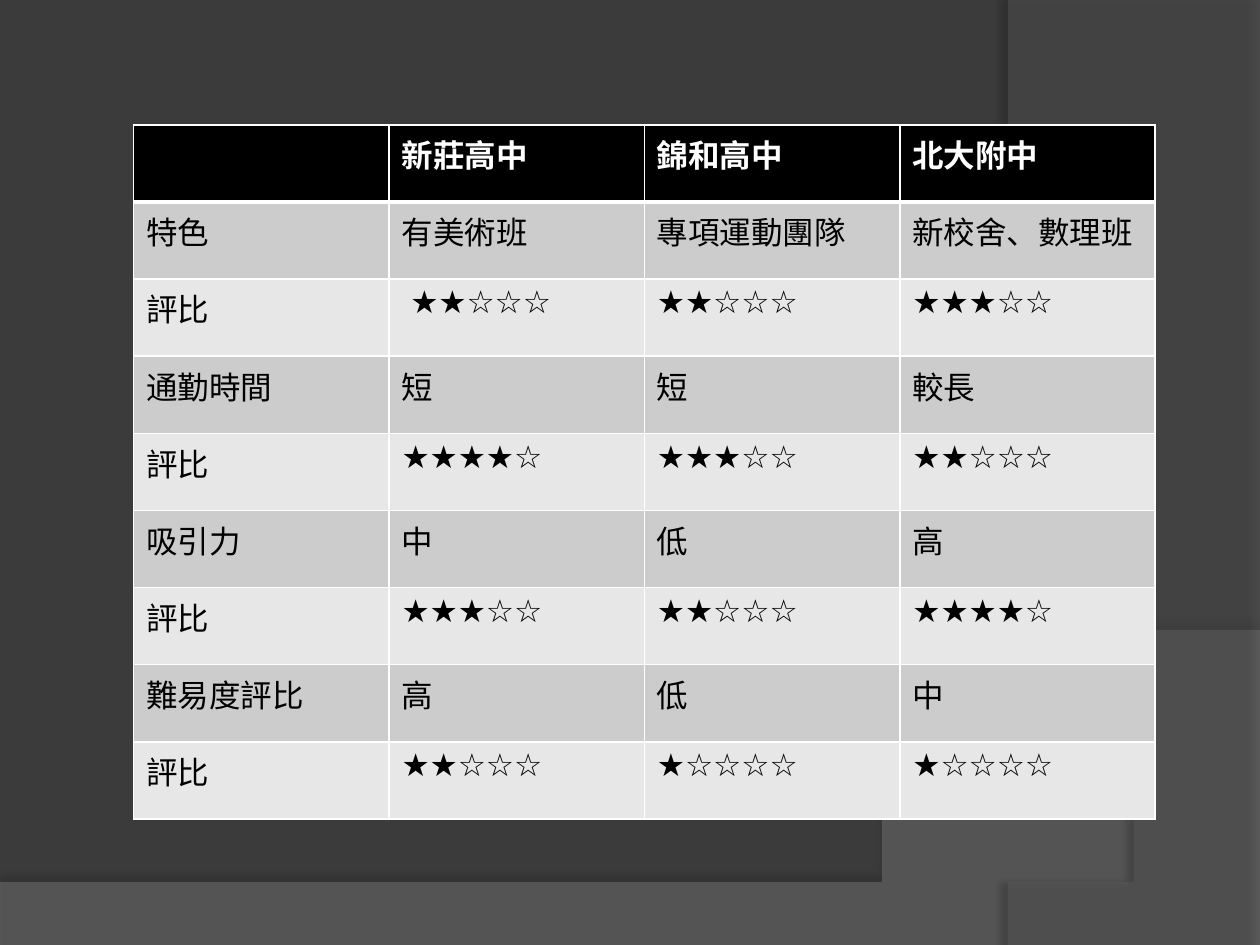
from lxml.etree import SubElement
from pptx import Presentation
from pptx.dml.color import RGBColor
from pptx.oxml.ns import qn
from pptx.util import Inches, Pt

COLORS = {
    "background": "3B3B3B",
    "lower_wave": "7F7F7F",
    "right_wave": "5E5E5E",
    "shadow": "000000",
    "header": "000000",
    "odd_row": "CCCCCC",
    "even_row": "E7E7E7",
    "border": "FFFFFF",
    "header_text": "FFFFFF",
    "body_text": "000000",
}
FONT = "Arial"
CURVE_STEPS = 48

SCHOOL_ROWS = [
    ("", "新莊高中", "錦和高中", "北大附中"),
    ("特色", "有美術班", "專項運動團隊", "新校舍、數理班"),
    ("評比", " ★★☆☆☆", "★★☆☆☆", "★★★☆☆"),
    ("通勤時間", "短", "短", "較長"),
    ("評比", "★★★★☆", "★★★☆☆", "★★☆☆☆"),
    ("吸引力", "中", "低", "高"),
    ("評比", "★★★☆☆", "★★☆☆☆", "★★★★☆"),
    ("難易度評比", "高", "低", "中"),
    ("評比", "★★☆☆☆", "★☆☆☆☆", "★☆☆☆☆"),
]


def color(name):
    return RGBColor.from_string(COLORS[name])


def curve_points(start, control_one, control_two, end):
    """Points along a cubic Bezier curve, without its start."""
    points = []
    for step in range(1, CURVE_STEPS + 1):
        t = step / CURVE_STEPS
        weights = ((1 - t) ** 3, 3 * t * (1 - t) ** 2, 3 * t**2 * (1 - t), t**3)
        corners = (start, control_one, control_two, end)
        points.append(tuple(sum(w * corner[axis] for w, corner in zip(weights, corners))
                            for axis in (0, 1)))
    return points


def add_color(parent, name, alpha):
    element = SubElement(parent, qn("a:srgbClr"), val=COLORS[name])
    SubElement(element, qn("a:alpha"), val=str(alpha * 1000))


def add_wave(slide, corners, curve, fill, alpha, shadow):
    """Draw a translucent outline: straight corners, then a curve from the last one."""
    points = corners + curve_points(corners[-1], *curve)
    builder = slide.shapes.build_freeform(*points[0], scale=Inches(1))
    builder.add_line_segments(points[1:], close=True)
    wave = builder.convert_to_shape()
    wave.line.fill.background()
    wave.fill.solid()
    wave.fill.fore_color.rgb = color(fill)
    fill_color = wave.fill._xPr.find(qn("a:solidFill"))[0]
    SubElement(fill_color, qn("a:alpha"), val=str(alpha * 1000))

    shadow_alpha, blur, distance, direction = shadow
    wave.shadow.inherit = False
    effects = wave._element.spPr.find(qn("a:effectLst"))
    outer = SubElement(effects, qn("a:outerShdw"), blurRad=str(Pt(blur)),
                       dist=str(Pt(distance)), dir=str(direction * 60000),
                       rotWithShape="0")
    add_color(outer, "shadow", shadow_alpha)


def set_borders(cell, top=1, bottom=1):
    properties = cell._tc.get_or_add_tcPr()
    for side, width in (("L", 1), ("R", 1), ("T", top), ("B", bottom)):
        line = SubElement(properties, qn(f"a:ln{side}"), w=str(Pt(width)))
        fill = SubElement(line, qn("a:solidFill"))
        SubElement(fill, qn("a:srgbClr"), val=COLORS["border"])


def fill_cell(cell, text, row):
    is_header = row == 0
    set_borders(cell, top=3 if row == 1 else 1, bottom=3 if is_header else 1)
    cell.fill.solid()
    body_fill = "odd_row" if row % 2 else "even_row"
    cell.fill.fore_color.rgb = color("header" if is_header else body_fill)
    cell.text = text
    font = cell.text_frame.paragraphs[0].font
    font.name = FONT
    font.size = Pt(18)
    font.bold = is_header
    font.color.rgb = color("header_text" if is_header else "body_text")


def add_school_table(slide):
    frame = slide.shapes.add_table(len(SCHOOL_ROWS), len(SCHOOL_ROWS[0]), Inches(1.06),
                                   Inches(0.99), Inches(8.11), Inches(5.51))
    for row, texts in enumerate(SCHOOL_ROWS):
        for column, text in enumerate(texts):
            fill_cell(frame.table.cell(row, column), text, row)


def main():
    deck = Presentation()
    deck.slide_width, deck.slide_height = Inches(10), Inches(7.5)
    slide = deck.slides.add_slide(deck.slide_layouts[6])
    slide.background.fill.solid()
    slide.background.fill.fore_color.rgb = color("background")

    add_wave(slide, [(0, 7.05), (0, 7.51), (10, 7.51), (10, 5.2)],
             [(5.59, 7.29), (3.91, 7.19), (0, 7.05)],
             "lower_wave", 45, (35, 4, 3.5, 270))
    add_wave(slide, [(10, 0.02), (10, 7.5), (8.21, 7.5)],
             [(9.35, 6.19), (10.18, 3), (8, 0)],
             "right_wave", 40, (45, 4, 4, 180))
    add_school_table(slide)
    deck.save("out.pptx")


if __name__ == "__main__":
    main()
